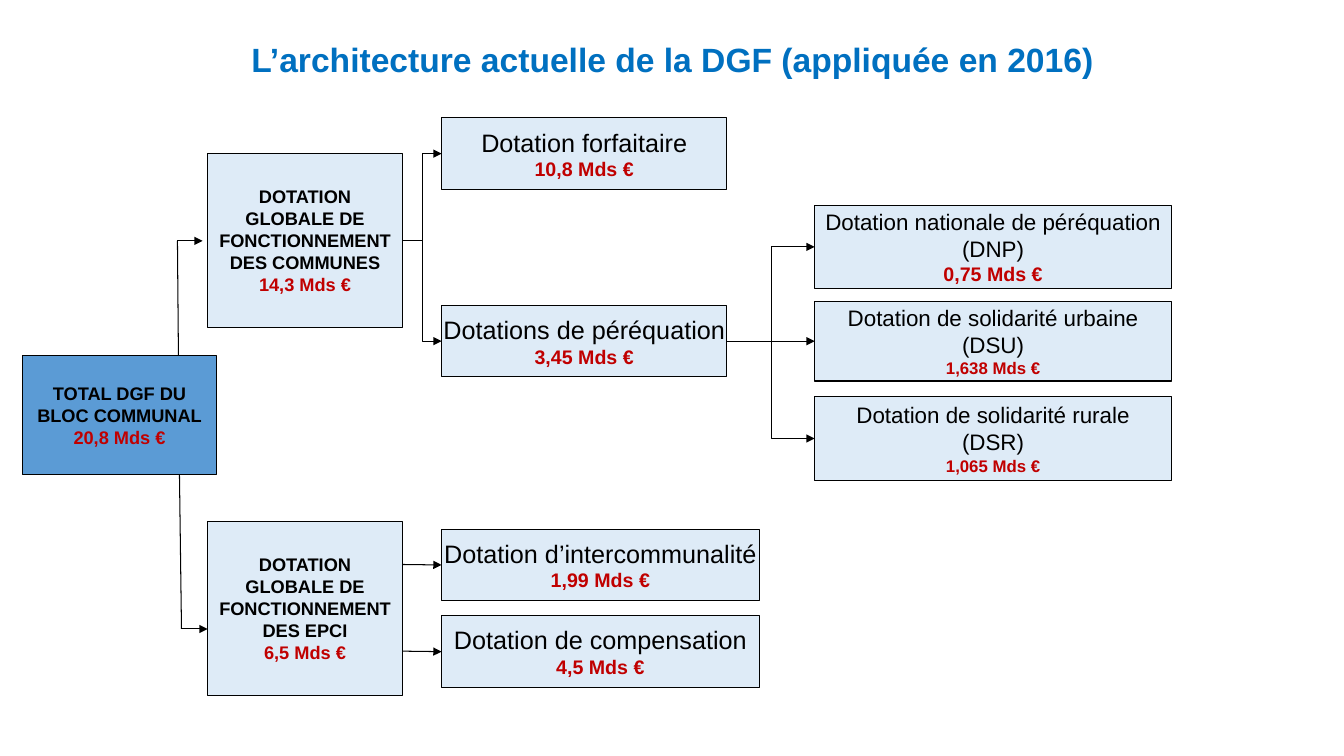
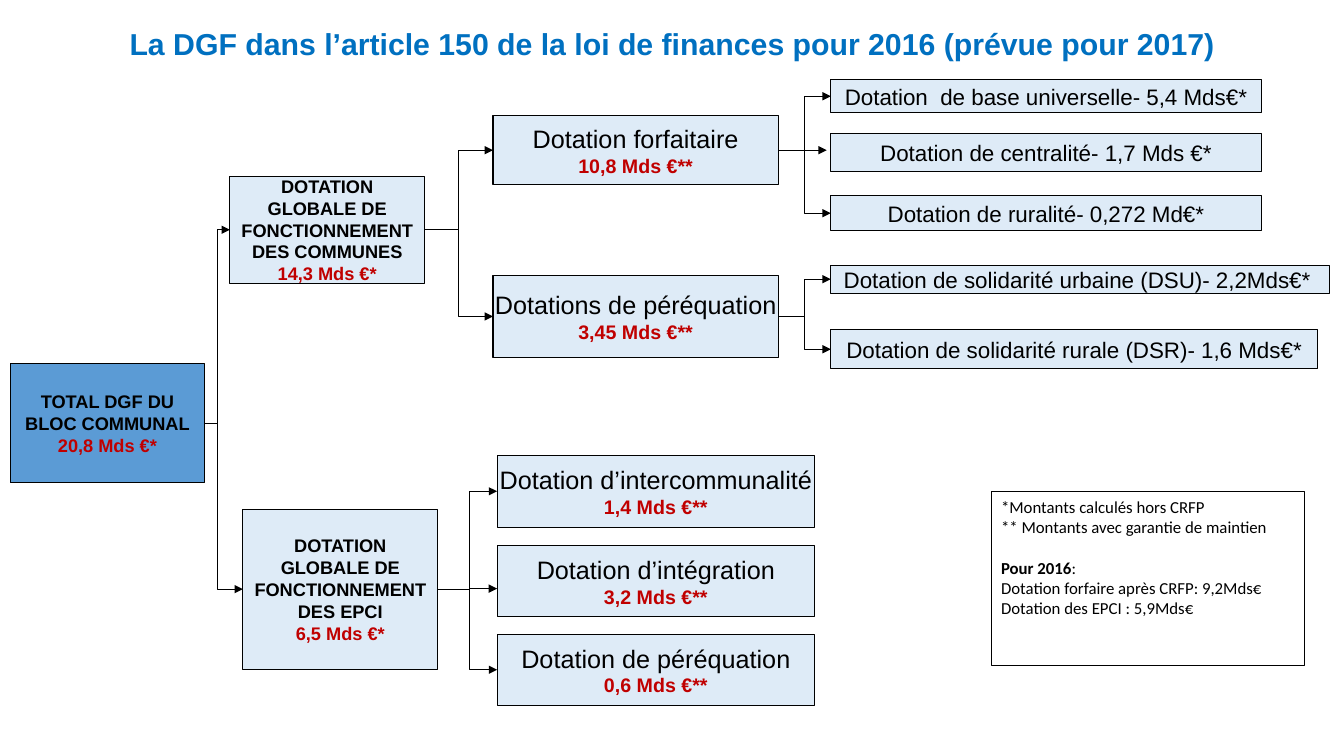
from lxml.etree import SubElement
from pptx import Presentation
from pptx.dml.color import RGBColor
from pptx.enum.shapes import MSO_CONNECTOR as Link, MSO_SHAPE as Shape
from pptx.enum.text import MSO_ANCHOR as Anchor, PP_ALIGN as Align
from pptx.oxml.ns import qn
from pptx.util import Inches, Pt

BLACK, RED, TITLE_BLUE = "000000", "C00000", "0070C0"
PALE, STRONG = "DEEBF7", "5B9BD5"

# Box kinds: fill, label size, label bold, amount size, wrap
KINDS = {
    "total": (STRONG, 13, True, 13, True),
    "global": (PALE, 13, True, 13, True),
    "grant": (PALE, 18, False, 14, False),
    "share": (PALE, 16, False, 12, True),
    "main share": (PALE, 16, False, 14, True),
}
TOTAL = ["TOTAL DGF DU BLOC COMMUNAL"]
COMMUNES = ["DOTATION GLOBALE DE FONCTIONNEMENT DES COMMUNES"]
EPCI = ["DOTATION GLOBALE DE FONCTIONNEMENT DES EPCI"]

# boxes: name -> kind, (left, top, width, height), labels, amount
# trees: parent, x of the bend, children
# lines: start, end, arrowhead, box joined at the end
SLIDES = [
    {
        "title": ("L’architecture actuelle de la DGF (appliquée en 2016)", 24, 0.38),
        "line_width": 0.75,
        "boxes": {
            "total": ("total", (0.22, 3.53, 1.93, 1.18), TOTAL, "20,8 Mds €"),
            "communes": ("global", (2.06, 1.52, 1.93, 1.73), COMMUNES, "14,3 Mds €"),
            "epci": ("global", (2.06, 5.17, 1.93, 1.73), EPCI, "6,5 Mds €"),
            "forfaitaire": ("grant", (4.38, 1.17, 2.83, 0.71), ["Dotation forfaitaire"], "10,8 Mds €"),
            "perequation": ("grant", (4.38, 3.03, 2.83, 0.71), ["Dotations de péréquation"], "3,45 Mds €"),
            "intercommunalite": ("grant", (4.38, 5.25, 3.15, 0.71), ["Dotation d’intercommunalité"], "1,99 Mds €"),
            "compensation": ("grant", (4.38, 6.11, 3.15, 0.71), ["Dotation de compensation"], "4,5 Mds €"),
            "dnp": ("main share", (8.08, 2.04, 3.54, 0.82),
                    ["Dotation nationale de péréquation", "(DNP)"], "0,75 Mds €"),
            "dsu": ("share", (8.08, 2.99, 3.54, 0.79),
                    ["Dotation de solidarité urbaine", "(DSU)"], "1,638 Mds €"),
            "dsr": ("share", (8.08, 3.93, 3.54, 0.84),
                    ["Dotation de solidarité rurale", "(DSR)"], "1,065 Mds €"),
        },
        "trees": [
            ("communes", 4.19, ["forfaitaire", "perequation"]),
            ("perequation", 7.65, ["dnp", "dsu", "dsr"]),
        ],
        "lines": [
            ((1.77, 3.53), (1.76, 2.39), False, None),
            ((1.76, 2.39), (2.01, 2.39), True, None),
            ((1.78, 4.71), (1.8, 6.24), False, None),
            ((1.8, 6.24), (2.06, 6.24), True, None),
            ((3.99, 5.6), (4.38, 5.6), True, "intercommunalite"),
            ((3.99, 6.46), (4.38, 6.46), True, "compensation"),
        ],
    },
    {
        "title": ("La DGF dans l’article 150 de la loi de finances pour 2016 (prévue pour 2017)", 21.6, 0.24),
        "line_width": 0.5,
        "boxes": {
            "total": ("total", (0.1, 3.61, 1.93, 1.18), TOTAL, "20,8 Mds €*"),
            "communes": ("global", (2.28, 1.75, 1.93, 1.06), COMMUNES, "14,3 Mds €*"),
            "epci": ("global", (2.41, 5.05, 1.93, 1.59), EPCI, "6,5 Mds €*"),
            "forfaitaire": ("grant", (4.89, 1.15, 2.83, 0.68), ["Dotation forfaitaire"], "10,8 Mds €**"),
            "perequation": ("grant", (4.89, 2.73, 2.83, 0.82), ["Dotations de péréquation"], "3,45 Mds €**"),
            "intercommunalite": ("grant", (4.93, 4.52, 3.15, 0.71), ["Dotation d’intercommunalité"], "1,4 Mds €**"),
            "integration": ("grant", (4.93, 5.41, 3.15, 0.71), ["Dotation d’intégration"], "3,2 Mds €**"),
            "perequation epci": ("grant", (4.93, 6.29, 3.15, 0.71), ["Dotation de péréquation"], "0,6 Mds €**"),
            "base": ("share", (8.24, 0.79, 4.27, 0.33), ["Dotation  de base universelle- 5,4 Mds€*"], None),
            "centralite": ("share", (8.24, 1.32, 4.27, 0.38), ["Dotation de centralité- 1,7 Mds €*"], None),
            "ruralite": ("share", (8.24, 1.94, 4.27, 0.35), ["Dotation de ruralité- 0,272 Md€*"], None),
            "dsu": ("share", (8.24, 2.63, 4.95, 0.28), ["Dotation de solidarité urbaine (DSU)- 2,2Mds€* "], None),
            "dsr": ("share", (8.24, 3.27, 4.83, 0.39), ["Dotation de solidarité rurale (DSR)- 1,6 Mds€*"], None),
        },
        "trees": [
            ("total", 2.16, ["communes", "epci"]),
            ("communes", 4.55, ["forfaitaire", "perequation"]),
            ("forfaitaire", 7.98, ["base", "ruralite"]),
            ("perequation", 7.98, ["dsu", "dsr"]),
            ("epci", 4.66, ["intercommunalite", "perequation epci"]),
        ],
        "lines": [
            ((7.96, 1.49), (8.2, 1.49), True, None),
            ((4.66, 5.84), (4.93, 5.84), True, None),
        ],
        # Paragraphs: space before, then (text, bold) runs
        "note": ((9.83, 4.88, 3.11, 1.72), [
            (0, [("*Montants calculés hors CRFP", False)]),
            (0, [("** Montants avec garantie de maintien", False)]),
            (14.6, [("Pour 2016", True), (":", False)]),
            (0, [("Dotation forfaire après CRFP: 9,2Mds€", False)]),
            (0, [("Dotation des EPCI : 5,9Mds€", False)]),
        ]),
    },
]


def rgb(color):
    return RGBColor.from_string(color)


def add_para(frame, first, runs, size, color=BLACK, font="Arial", align=Align.CENTER):
    para = frame.paragraphs[0] if first else frame.add_paragraph()
    para.alignment = align
    for text, bold in runs:
        span = para.add_run()
        span.text = text
        span.font.name, span.font.size, span.font.bold = font, Pt(size), bold
        span.font.color.rgb = rgb(color)
    return para


def add_title(slide, text, size, top):
    box = slide.shapes.add_textbox(Inches(0.42), Inches(top), Inches(12.5), Inches(0.55))
    box.text_frame.word_wrap = True
    add_para(box.text_frame, True, [(text, True)], size, TITLE_BLUE).line_spacing = 0.9


def add_panel(slide, place, fill, anchor, wrap=True):
    box = slide.shapes.add_shape(Shape.RECTANGLE, *map(Inches, place))
    box.shadow.inherit = False
    if fill:
        box.fill.solid()
        box.fill.fore_color.rgb = rgb(fill)
    else:
        box.fill.background()
    box.line.color.rgb = rgb(BLACK)
    box.line.width = Pt(0.75)
    box.text_frame.word_wrap = wrap
    box.text_frame.vertical_anchor = anchor
    return box


def add_box(slide, kind, place, labels, amount):
    fill, size, bold, amount_size, wrap = KINDS[kind]
    box = add_panel(slide, place, fill, Anchor.MIDDLE, wrap)
    for index, label in enumerate(labels):
        add_para(box.text_frame, index == 0, [(label, bold)], size)
    if amount:
        add_para(box.text_frame, False, [(amount, True)], amount_size, RED)
    return box


def add_note(slide, place, paragraphs):
    frame = add_panel(slide, place, None, Anchor.TOP).text_frame
    for index, (gap, runs) in enumerate(paragraphs):
        para = add_para(frame, index == 0, runs, 12, font="Calibri", align=Align.LEFT)
        para.space_before = Pt(gap)


def add_link(slide, kind, start, end, width, arrow=True):
    link = slide.shapes.add_connector(kind, *start, *end)
    link.line.color.rgb = rgb(BLACK)
    link.line.width = Pt(width)
    properties = link._element.spPr
    if arrow:
        SubElement(properties.find(qn("a:ln")), qn("a:tailEnd"), type="triangle")
    SubElement(properties, qn("a:effectLst"))
    return link


def join_boxes(slide, parent, child, bend, width):
    """Arrow from the right side of parent to the left side of child."""
    start = (parent.left + parent.width, parent.top + parent.height // 2)
    end = (child.left, child.top + child.height // 2)
    level = abs(start[1] - end[1]) < Inches(0.02)
    link = add_link(slide, Link.STRAIGHT if level else Link.ELBOW, start, end, width)
    link.begin_connect(parent, 3)
    link.end_connect(child, 1)
    if not level:
        share = round(100000 * (Inches(bend) - start[0]) / (end[0] - start[0]))
        guides = link._element.spPr.find(qn("a:prstGeom")).get_or_add_avLst()
        SubElement(guides, qn("a:gd"), name="adj1", fmla=f"val {share}")


def build_slide(deck, content):
    slide = deck.slides.add_slide(deck.slide_layouts[6])
    width = content["line_width"]
    add_title(slide, *content["title"])
    boxes = {name: add_box(slide, *parts) for name, parts in content["boxes"].items()}
    # Branches between boxes
    for parent, bend, children in content["trees"]:
        for child in children:
            join_boxes(slide, boxes[parent], boxes[child], bend, width)
    # Separate lines and arrows
    for start, end, arrow, target in content["lines"]:
        link = add_link(slide, Link.STRAIGHT, map(Inches, start), map(Inches, end), width, arrow)
        if target:
            link.end_connect(boxes[target], 1)
    if "note" in content:
        add_note(slide, *content["note"])


def main():
    deck = Presentation()
    deck.slide_width, deck.slide_height = Inches(13.33), Inches(7.5)
    for content in SLIDES:
        build_slide(deck, content)
    deck.save("out.pptx")


if __name__ == "__main__":
    main()
